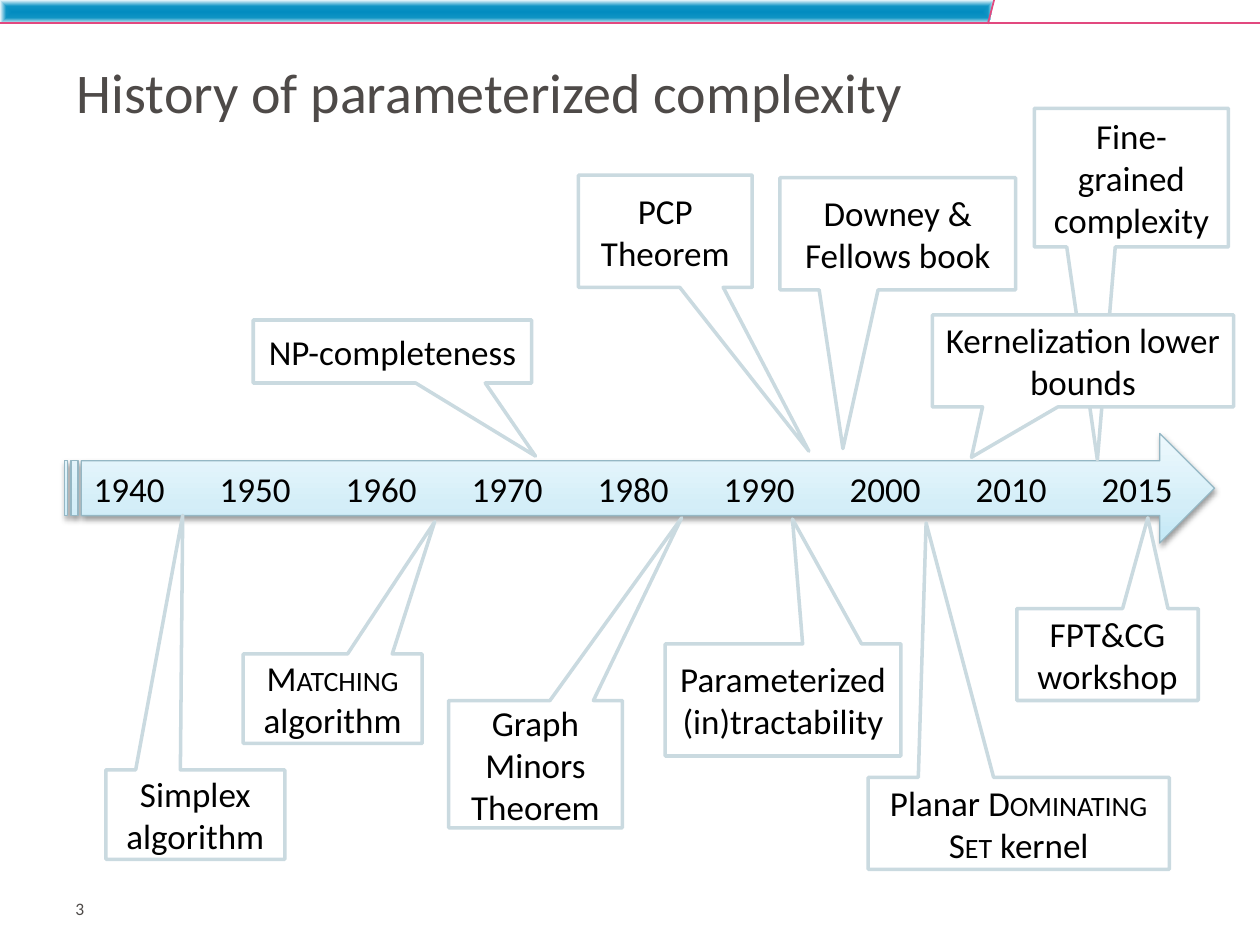
from lxml import etree
from pptx import Presentation
from pptx.dml.color import RGBColor
from pptx.enum.shapes import MSO_CONNECTOR, MSO_SHAPE
from pptx.enum.text import MSO_ANCHOR, PP_ALIGN
from pptx.oxml import parse_xml
from pptx.oxml.ns import qn
from pptx.util import Inches, Pt

LEFT, CENTER = PP_ALIGN.LEFT, PP_ALIGN.CENTER
TOP, MIDDLE = MSO_ANCHOR.TOP, MSO_ANCHOR.MIDDLE
STRAIGHT = MSO_CONNECTOR.STRAIGHT
CALLOUT, ARROW = MSO_SHAPE.RECTANGULAR_CALLOUT, MSO_SHAPE.STRIPED_RIGHT_ARROW
A = 'xmlns:a="http://schemas.openxmlformats.org/drawingml/2006/main"'
COLORS = {
    "text": "000000", "heading": "4E4A48", "white": "FFFFFF",
    "callout": "CADAE0", "arrow": "95B7C4", "rule": "E2497F",
}
BAR_STOPS = [(0, "038CC0"), (49, "0F94C4"), (100, "EEF9FD")]
ARROW_STOPS = [(0, "C3E8F6"), (35, "D4EEF8"), (100, "EEF9FD")]
W, H = 10, 7.5


def write(tf, text, size=20, color="text", align=CENTER, anchor=MIDDLE):
    """Fill a text frame; parts between | signs are set in small caps."""
    tf.word_wrap = True
    tf.vertical_anchor = anchor
    p = tf.paragraphs[0]
    p.alignment = align
    for i, part in enumerate(text.split("|")):
        for j, line in enumerate(part.split("\n")):
            if j:
                p.add_line_break()
            if not line:
                continue
            r = p.add_run()
            r.text = line
            r.font.size = Pt(size)
            r.font.name = "Calibri"
            r.font.color.rgb = RGBColor.from_string(COLORS[color])
            if i % 2:
                r._r.get_or_add_rPr().set("cap", "small")


def gradient(s, stops, direction):
    """Replace the shape's solid fill by a gradient with any number of stops."""
    s.fill.solid()
    gs = "".join(f'<a:gs pos="{pos * 1000}"><a:srgbClr val="{c}"/></a:gs>' for pos, c in stops)
    old = s._element.spPr.find(qn("a:solidFill"))
    new = parse_xml(f'<a:gradFill {A} rotWithShape="1"><a:gsLst>{gs}</a:gsLst>{direction}</a:gradFill>')
    s._element.spPr.replace(old, new)


prs = Presentation()
prs.slide_width, prs.slide_height = Inches(W), Inches(H)
slide = prs.slides.add_slide(prs.slide_layouts[5])
shapes = slide.shapes

# Header bar with its rules
fb = shapes.build_freeform(0, 0, scale=Inches(1) / 100)
fb.add_line_segments([(789, 0), (785, 19), (0, 19)], close=True)
bar = fb.convert_to_shape()
bar.shadow.inherit = False
bar.line.fill.background()
gradient(bar, BAR_STOPS, '<a:path path="shape"><a:fillToRect l="50000" t="50000" r="50000" b="50000"/></a:path>')

for ends in [(7.89, 0, 7.84, 0.19), (W, 0.18, 0, 0.18)]:
    rule = shapes.add_connector(STRAIGHT, *map(Inches, ends))
    rule.line.color.rgb = RGBColor.from_string(COLORS["rule"])
    rule.line.width = Pt(1)
    etree.SubElement(rule._element.spPr, qn("a:effectLst"))

title = shapes.title
title.left, title.top, title.width, title.height = map(Inches, (0.51, 0.38, 9, 0.69))
write(title.text_frame, "History of parameterized complexity", size=32, color="heading", align=LEFT)

# Timeline: one default tab stop per decade
timeline = shapes.add_shape(ARROW, *map(Inches, (0.51, 3.44, 9.13, 0.87)))
gradient(timeline, ARROW_STOPS, '<a:lin ang="16200000" scaled="0"/>')
timeline.line.color.rgb = RGBColor.from_string(COLORS["arrow"])
timeline.line.width = Pt(0.75)
timeline._element.spPr.append(parse_xml(
    f'<a:effectLst {A}><a:outerShdw blurRad="{Pt(3.1)}" dist="{Pt(1.6)}" dir="5400000" rotWithShape="0">'
    '<a:srgbClr val="000000"><a:alpha val="38000"/></a:srgbClr></a:outerShdw></a:effectLst>'))
years = [*range(1940, 2011, 10), 2015]
write(timeline.text_frame, "\t".join(map(str, years)), align=LEFT)

# Callouts: text, box (left, top, width, height), tip (x, y) on the timeline
callouts = [
    ("Simplex algorithm", (0.84, 6.11, 1.42, 0.71), (1.45, 4.09)),
    ("|Matching| algorithm", (1.93, 5.19, 1.42, 0.71), (3.45, 4.14)),
    ("NP-completeness", (2.01, 2.54, 2.21, 0.5), (4.25, 3.62)),
    ("Graph Minors Theorem", (3.56, 5.56, 1.38, 1.01), (5.41, 4.11)),
    ("PCP Theorem", (4.59, 1.39, 1.38, 0.89), (6.42, 3.58)),
    ("Parameterized\n(in)tractability", (5.28, 5.11, 1.87, 0.89), (6.29, 4.12)),
    ("Downey & Fellows book", (6.19, 1.41, 1.87, 0.89), (6.69, 3.56)),
    ("Planar |Dominating Set| kernel", (6.89, 6.17, 2.39, 0.73), (7.35, 4.15)),
    ("FPT&CG workshop", (8.07, 4.83, 1.44, 0.73), (9.11, 4.11)),
    ("Fine-grained complexity", (8.21, 0.86, 1.54, 1.1), (8.71, 3.65)),
    ("Kernelization lower bounds", (7.4, 2.5, 2.39, 0.73), (7.71, 3.63)),
]
for text, (x, y, w, h), (tip_x, tip_y) in callouts:
    s = shapes.add_shape(CALLOUT, *map(Inches, (x, y, w, h)))
    s.adjustments[0] = (tip_x - x) / w - 0.5
    s.adjustments[1] = (tip_y - y) / h - 0.5
    s.shadow.inherit = False
    s.fill.solid()
    s.fill.fore_color.rgb = RGBColor.from_string(COLORS["white"])
    s.line.color.rgb = RGBColor.from_string(COLORS["callout"])
    s.line.width = Pt(2)
    write(s.text_frame, text)

number = shapes.add_textbox(*map(Inches, (0.5, 7.13, 2.14, 0.3)))
number.text_frame.margin_top = 0
write(number.text_frame, "3", size=10, color="heading", align=LEFT, anchor=TOP)

prs.save("out.pptx")
